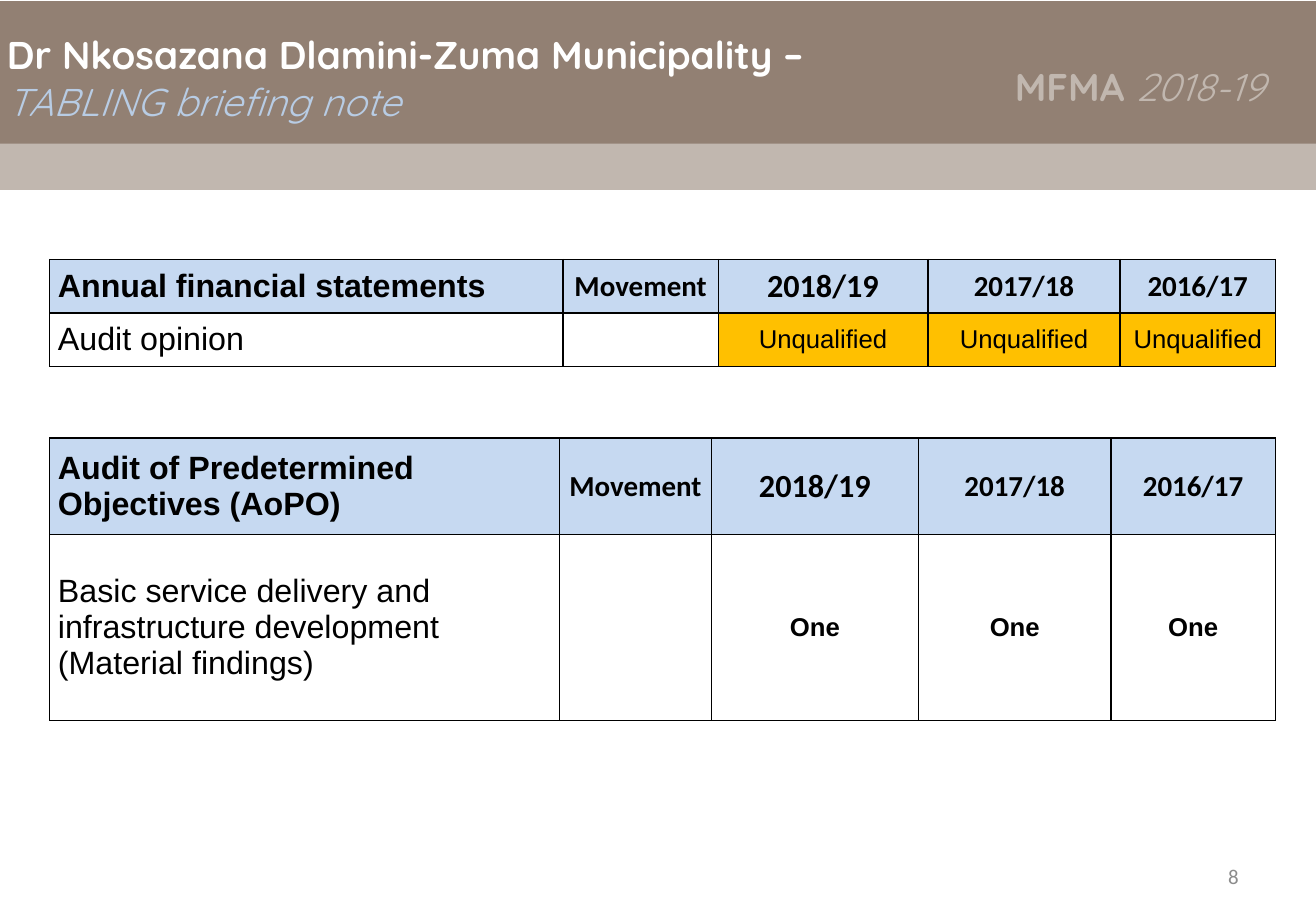
from lxml.etree import SubElement
from pptx import Presentation
from pptx.dml.color import RGBColor
from pptx.enum.shapes import MSO_SHAPE
from pptx.enum.text import MSO_ANCHOR, MSO_AUTO_SIZE, PP_ALIGN
from pptx.oxml.ns import qn
from pptx.util import Emu, Pt

PX = 9144  # EMU per px, 100 px to the inch

BROWN = RGBColor(0x92, 0x80, 0x73)
TAUPE = RGBColor(0xC1, 0xB7, 0xAF)
WHITE = RGBColor(0xFF, 0xFF, 0xFF)
BLACK = RGBColor(0x00, 0x00, 0x00)
PALE_BLUE = RGBColor(0xB8, 0xCC, 0xE4)
HEADER_BLUE = RGBColor(0xC6, 0xD9, 0xF1)
AMBER = RGBColor(0xFF, 0xC0, 0x00)
GREY = RGBColor(0x8C, 0x8C, 0x8C)

# Content
TITLE = [("Dr Nkosazana Dlamini-Zuma Municipality –", WHITE, True, False),
         ("TABLING briefing note", PALE_BLUE, False, True)]
REPORT = [("MFMA ", True, False), ("2018-19", False, True)]
PAGE = "8"
BANDS = [(1, 125, BROWN), (124, 40, TAUPE)]  # top, height, colour
HEADINGS = ["Movement", "2018/19", "2017/18", "2016/17"]
HEADING_SIZES = [18, 20, 18, 18]
TABLES = [
    dict(top=224, cols=[443, 134, 181, 166, 134], rows=[46, 46],
         heading="Annual financial statements", label="Audit opinion",
         results=["", "Unqualified", "Unqualified", "Unqualified"],
         result_bold=False, result_fill=AMBER),
    dict(top=378, cols=[440, 131, 179, 166, 142], rows=[83, 161],
         heading="Audit of Predetermined Objectives (AoPO)",
         label="Basic service delivery and infrastructure development "
               "(Material findings)",
         results=["", "One", "One", "One"],
         result_bold=True, result_fill=None),
]
TABLE_LEFT = 43


def px(*lengths):
    return [Emu(n * PX) for n in lengths]


def add_run(p, text, size, font, color, bold=False, italic=False):
    r = p.add_run()
    r.text = text
    f = r.font
    f.size, f.name, f.bold, f.italic = Pt(size), font, bold, italic
    f.color.rgb = color


def set_borders(cell):
    tcPr = cell._tc.get_or_add_tcPr()
    for i, side in enumerate(("a:lnL", "a:lnR", "a:lnT", "a:lnB")):
        ln = tcPr.makeelement(qn(side), {"w": str(Pt(1))})
        fill = SubElement(ln, qn("a:solidFill"))
        SubElement(fill, qn("a:srgbClr"), val=str(BLACK))
        tcPr.insert(i, ln)


def format_cell(cell, text, size, font, bold, align, fill):
    cell.margin_left, cell.margin_right = px(7, 7)
    cell.margin_top = cell.margin_bottom = 0
    cell.vertical_anchor = MSO_ANCHOR.MIDDLE
    if fill is None:
        cell.fill.background()
    else:
        cell.fill.solid()
        cell.fill.fore_color.rgb = fill
    set_borders(cell)
    if text:
        p = cell.text_frame.paragraphs[0]
        p.alignment = align
        p.space_before = p.space_after = Pt(2)
        add_run(p, text, size, font, BLACK, bold)


def add_audit_table(s, spec_top, cols, rows, heading, label, results,
                    result_bold, result_fill):
    frame = s.shapes.add_table(len(rows), len(cols),
                               *px(TABLE_LEFT, spec_top, sum(cols), sum(rows)))
    table = frame.table
    table.first_row = table.horz_banding = False
    for col, width in zip(table.columns, px(*cols)):
        col.width = width
    for row, height in zip(table.rows, px(*rows)):
        row.height = height
    left, center = PP_ALIGN.LEFT, PP_ALIGN.CENTER
    format_cell(table.cell(0, 0), heading, 20, "Arial", True, left, HEADER_BLUE)
    format_cell(table.cell(1, 0), label, 20, "Arial", False, left, None)
    for c, (head, size, result) in enumerate(
            zip(HEADINGS, HEADING_SIZES, results), 1):
        format_cell(table.cell(0, c), head, size, "Calibri", True, center,
                    HEADER_BLUE)
        format_cell(table.cell(1, c), result, 16, "Arial", result_bold, center,
                    result_fill if result else None)


def add_right_text(s, box):
    tf = s.shapes.add_textbox(*px(*box)).text_frame
    tf.word_wrap = True
    p = tf.paragraphs[0]
    p.alignment = PP_ALIGN.RIGHT
    return tf, p


def main():
    prs = Presentation()
    prs.slide_width, prs.slide_height = px(1136, 793)
    s = prs.slides.add_slide(prs.slide_layouts[5])

    # Header bands
    for top, height, color in BANDS:
        sp = s.shapes.add_shape(MSO_SHAPE.RECTANGLE, *px(0, top, 1136, height))
        sp.shadow.inherit = False
        sp.fill.solid()
        sp.fill.fore_color.rgb = color
        sp.line.fill.background()

    # Title, brought in front of the bands
    title = s.shapes.title
    s.shapes._spTree.append(title._element)
    title.left, title.top, title.width, title.height = px(6, 27, 820, 84)
    tf = title.text_frame
    tf.auto_size = MSO_AUTO_SIZE.NONE
    tf.word_wrap = True
    tf.vertical_anchor = MSO_ANCHOR.TOP
    tf.margin_left = tf.margin_right = tf.margin_top = tf.margin_bottom = 0
    for i, (text, color, bold, italic) in enumerate(TITLE):
        p = tf.add_paragraph() if i else tf.paragraphs[0]
        p.alignment = PP_ALIGN.LEFT
        add_run(p, text, 24, "Quicksand", color, bold, italic)

    # Report name
    tf, p = add_right_text(s, (834, 43, 267, 73))
    p.line_spacing, p.space_before, p.space_after = 1.15, Pt(6), Pt(12)
    for text, bold, italic in REPORT:
        add_run(p, text, 24, "Quicksand", TAUPE, bold, italic)

    # Audit tables
    for t in TABLES:
        add_audit_table(s, *t.values())

    # Page number
    tf, p = add_right_text(s, (814, 735, 265, 42))
    tf.vertical_anchor = MSO_ANCHOR.MIDDLE
    add_run(p, PAGE, 13, "Calibri", GREY)

    prs.save("out.pptx")


if __name__ == "__main__":
    main()
